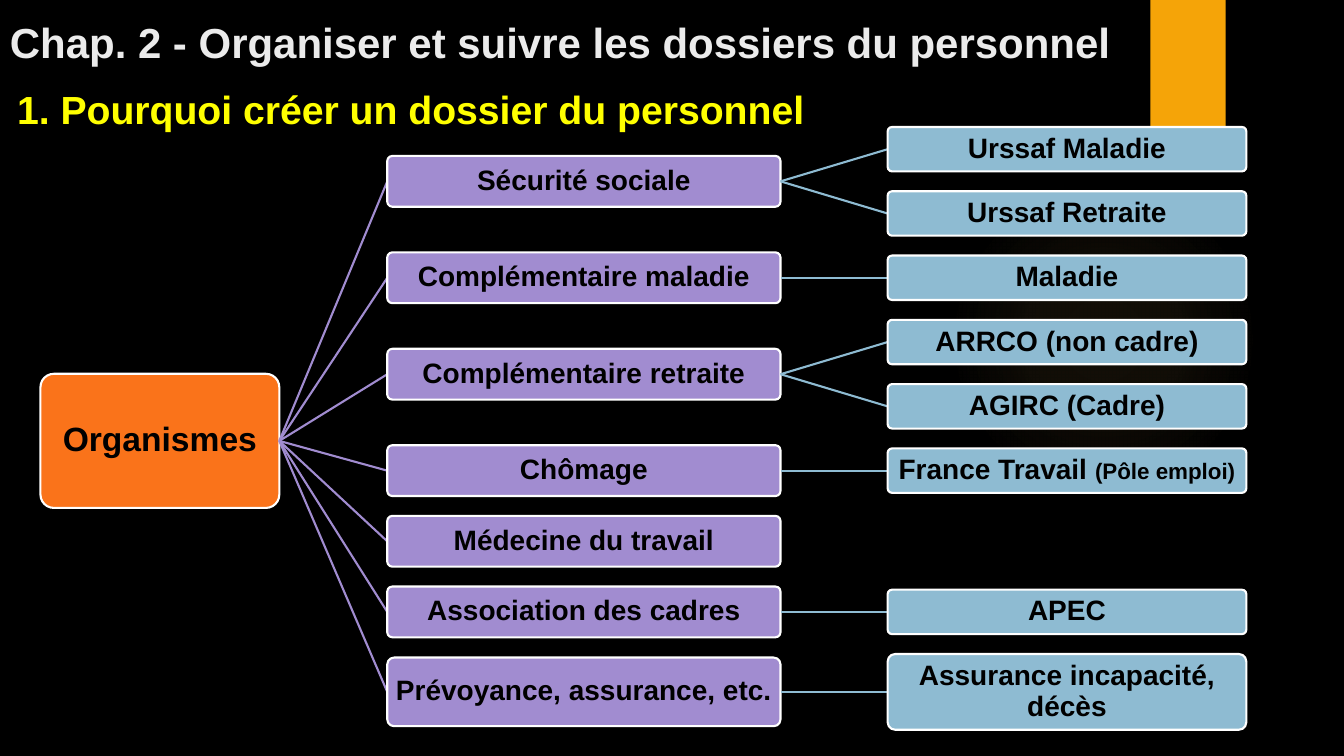
from lxml import etree
from pptx import Presentation
from pptx.dml.color import RGBColor
from pptx.enum.shapes import MSO_CONNECTOR, MSO_SHAPE
from pptx.enum.text import MSO_ANCHOR, PP_ALIGN
from pptx.oxml import parse_xml
from pptx.oxml.ns import nsdecls, qn
from pptx.util import Cm, Pt

COLORS = {
    "background": "000000", "glow": "FAC96A", "bar": "F5A408",
    "root": "FA731A", "branch": "A18CD0", "leaf": "8EBBD2",
    "outline": "FFFFFF", "label": "000000",
    "title": "EBEBEB", "subtitle": "FFFF00",
}
FONT = "Arial"

# All lengths below are centimetres.
ROOT_LEFT, ROOT_WIDTH, ROOT_HEIGHT, ROOT_MIDDLE = 1.02, 6.02, 3.38, 11.11
BRANCH_LEFT, BRANCH_WIDTH, BRANCH_HEIGHT = 9.76, 9.91, 1.28
LEAF_LEFT, LEAF_WIDTH, LEAF_HEIGHT = 22.37, 9.04, 1.12
TREE_TOP, GAP = 3.2, 0.5

# Branch label, branch height, leaf height, leaves as lists of (text, size).
BRANCHES = [
    ("Sécurité sociale", BRANCH_HEIGHT, LEAF_HEIGHT,
     [[("Urssaf Maladie", 20)], [("Urssaf Retraite", 20)]]),
    ("Complémentaire maladie", BRANCH_HEIGHT, LEAF_HEIGHT, [[("Maladie", 20)]]),
    ("Complémentaire retraite", BRANCH_HEIGHT, LEAF_HEIGHT,
     [[("ARRCO (non cadre)", 20)], [("AGIRC (Cadre)", 20)]]),
    ("Chômage", BRANCH_HEIGHT, LEAF_HEIGHT,
     [[("France Travail ", 20), ("(Pôle emploi)", 16)]]),
    ("Médecine du travail", BRANCH_HEIGHT, LEAF_HEIGHT, []),
    ("Association des cadres", BRANCH_HEIGHT, LEAF_HEIGHT, [[("APEC", 20)]]),
    ("Prévoyance, assurance, etc.", 1.73, 1.91,
     [[("Assurance incapacité, décès", 20)]]),
]


def rgb(name):
    return RGBColor.from_string(COLORS[name])


def add_run(paragraph, text, size, color):
    run = paragraph.add_run()
    run.text = text
    run.font.name = FONT
    run.font.size = Pt(size)
    run.font.bold = True
    run.font.color.rgb = rgb(color)


def add_plain_shape(slide, kind, left, top, width, height, color):
    shape = slide.shapes.add_shape(kind, Cm(left), Cm(top), Cm(width), Cm(height))
    shape.shadow.inherit = False
    shape.fill.solid()
    shape.fill.fore_color.rgb = rgb(color)
    shape.line.fill.background()
    return shape


def add_glow(slide, left, top, size):
    """Faint disc that fades out from its centre."""
    disc = add_plain_shape(slide, MSO_SHAPE.OVAL, left, top, size, size, "glow")
    stops = "".join(
        f'<a:gs pos="{position}"><a:srgbClr val="{COLORS["glow"]}">'
        f'<a:alpha val="{alpha}"/></a:srgbClr></a:gs>'
        for position, alpha in [(0, 7000), (36000, 6000), (69000, 0), (100000, 0)])
    gradient = parse_xml(
        f'<a:gradFill {nsdecls("a")} rotWithShape="1"><a:gsLst>{stops}</a:gsLst>'
        '<a:path path="circle"><a:fillToRect l="50000" t="50000" r="50000" '
        'b="50000"/></a:path></a:gradFill>')
    properties = disc.element.spPr
    properties.replace(properties.find(qn("a:solidFill")), gradient)


def add_node(slide, left, middle, width, height, color, runs):
    node = add_plain_shape(slide, MSO_SHAPE.ROUNDED_RECTANGLE, left,
                           middle - height / 2, width, height, color)
    node.adjustments[0] = 0.1
    node.line.color.rgb = rgb("outline")
    node.line.width = Pt(1.5)
    frame = node.text_frame
    frame.word_wrap = True
    frame.vertical_anchor = MSO_ANCHOR.MIDDLE
    frame.margin_left = frame.margin_right = Cm(0.03)
    frame.margin_top = frame.margin_bottom = Cm(0.03)
    paragraph = frame.paragraphs[0]
    paragraph.alignment = PP_ALIGN.CENTER
    paragraph.line_spacing = 0.9
    for text, size in runs:
        add_run(paragraph, text, size, "label")


def add_link(slide, x1, y1, x2, y2, color):
    link = slide.shapes.add_connector(MSO_CONNECTOR.STRAIGHT,
                                      Cm(x1), Cm(y1), Cm(x2), Cm(y2))
    link.line.color.rgb = rgb(color)
    link.line.width = Pt(1.5)
    etree.SubElement(link.element.spPr, qn("a:effectLst"))


def add_heading(slide, left, top, width, height, text, size, color,
                anchor=MSO_ANCHOR.TOP, margin_top=0.13):
    frame = slide.shapes.add_textbox(Cm(left), Cm(top), Cm(width),
                                     Cm(height)).text_frame
    frame.word_wrap = True
    frame.vertical_anchor = anchor
    frame.margin_top = Cm(margin_top)
    add_run(frame.paragraphs[0], text, size, color)


def add_tree(slide):
    """Place each branch below its neighbours, centred on its own leaves."""
    root_right = ROOT_LEFT + ROOT_WIDTH
    branch_right = BRANCH_LEFT + BRANCH_WIDTH
    add_node(slide, ROOT_LEFT, ROOT_MIDDLE, ROOT_WIDTH, ROOT_HEIGHT, "root",
             [("Organismes", 24)])
    next_branch = next_leaf = TREE_TOP
    for label, branch_height, leaf_height, leaves in BRANCHES:
        pitch = leaf_height + GAP
        stack = len(leaves) * pitch - GAP if leaves else 0
        middle = max(next_branch + branch_height / 2, next_leaf + stack / 2)
        add_link(slide, root_right, ROOT_MIDDLE, BRANCH_LEFT, middle, "branch")
        add_node(slide, BRANCH_LEFT, middle, BRANCH_WIDTH, branch_height,
                 "branch", [(label, 20)])
        for index, leaf in enumerate(leaves):
            leaf_middle = middle + (index - (len(leaves) - 1) / 2) * pitch
            add_link(slide, branch_right, middle, LEAF_LEFT, leaf_middle, "leaf")
            add_node(slide, LEAF_LEFT, leaf_middle, LEAF_WIDTH, leaf_height,
                     "leaf", leaf)
        next_branch = middle + branch_height / 2 + GAP
        if leaves:
            next_leaf = middle + stack / 2 + GAP


def main():
    deck = Presentation()
    deck.slide_width, deck.slide_height = Cm(33.87), Cm(19.05)
    slide = deck.slides.add_slide(deck.slide_layouts[6])
    slide.background.fill.solid()
    slide.background.fill.fore_color.rgb = rgb("background")
    add_glow(slide, 23.9, 4.65, 7.82)
    add_plain_shape(slide, MSO_SHAPE.RECTANGLE, 28.99, 0, 1.9, 3.18, "bar")
    add_tree(slide)
    add_heading(slide, 0, 0, 32.49, 1.8,
                "Chap. 2 - Organiser et suivre les dossiers du personnel",
                30, "title", anchor=MSO_ANCHOR.BOTTOM)
    add_heading(slide, 0.18, 1.8, 30.63, 1.45,
                "1. Pourquoi créer un dossier du personnel",
                28, "subtitle", margin_top=0.34)
    deck.save("out.pptx")


if __name__ == "__main__":
    main()
